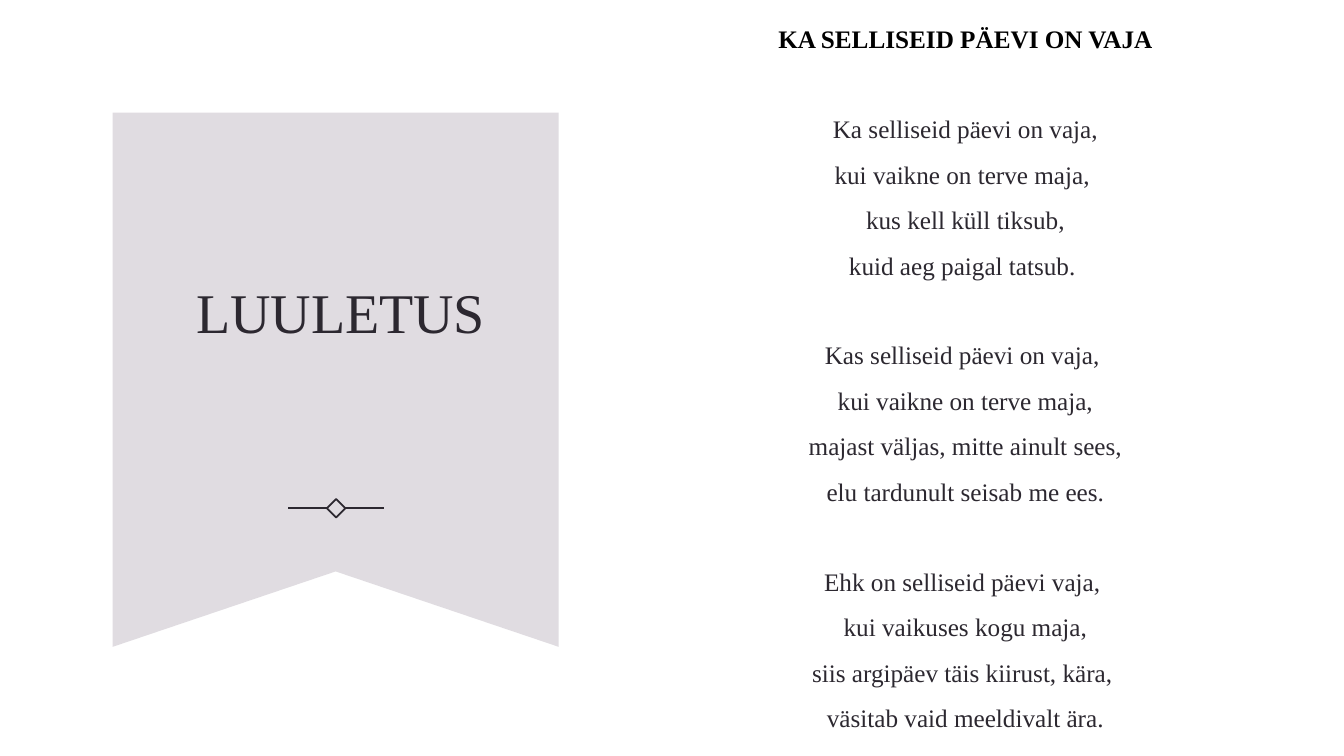
from lxml import etree
from pptx import Presentation
from pptx.dml.color import RGBColor
from pptx.enum.shapes import MSO_CONNECTOR, MSO_SHAPE
from pptx.enum.text import MSO_ANCHOR, MSO_AUTO_SIZE, PP_ALIGN
from pptx.oxml.ns import qn
from pptx.util import Cm, Pt

CENTER = PP_ALIGN.CENTER
MIDDLE = MSO_ANCHOR.MIDDLE
NO_AUTOFIT = MSO_AUTO_SIZE.NONE
STRAIGHT = MSO_CONNECTOR.STRAIGHT
RECTANGLE = MSO_SHAPE.RECTANGLE

FONT = "Times New Roman"
COLORS = {"paper": "FFFFFF", "ribbon": "E0DCE1", "ink": "2C2830", "heading": "000000"}
LINE_GAP = Pt(10.9)
STANZA_GAP = Pt(42.5)

HEADING = "KA SELLISEID PÄEVI ON VAJA"
STANZAS = [
    ["Ka selliseid päevi on vaja,", "kui vaikne on terve maja, ",
     "kus kell küll tiksub,", "kuid aeg paigal tatsub. "],
    ["Kas selliseid päevi on vaja, ", "kui vaikne on terve maja,",
     "majast väljas, mitte ainult sees,", "elu tardunult seisab me ees."],
    ["Ehk on selliseid päevi vaja, ", "kui vaikuses kogu maja,",
     "siis argipäev täis kiirust, kära, ", "väsitab vaid meeldivalt ära."],
]


def color(name):
    return RGBColor.from_string(COLORS[name])


def place(box, left, top, width, height):
    box.left, box.top, box.width, box.height = Cm(left), Cm(top), Cm(width), Cm(height)
    frame = box.text_frame
    frame.word_wrap = True
    frame.auto_size = NO_AUTOFIT
    frame.vertical_anchor = MIDDLE


def write(para, text, size, ink="ink", bold=False):
    para.text = text
    para.alignment = CENTER
    for span in para.runs:
        span.font.name = FONT
        span.font.size = Pt(size)
        span.font.bold = bold
        span.font.color.rgb = color(ink)


def remove_bullet(para):
    properties = para._p.get_or_add_pPr()
    properties.set("marL", "0")
    properties.set("indent", "0")
    etree.SubElement(properties, qn("a:buNone"))


def add_ribbon(page):
    """Draw the notched banner behind the title."""
    left, center, right = Cm(2.84), Cm(8.46), Cm(14.08)
    top, notch, bottom = Cm(2.84), Cm(14.4), Cm(16.3)
    outline = page.shapes.build_freeform(left, top)
    outline.add_line_segments([(right, top), (right, bottom), (center, notch), (left, bottom)])
    ribbon = outline.convert_to_shape()
    ribbon.shadow.inherit = False
    ribbon.fill.solid()
    ribbon.fill.fore_color.rgb = color("ribbon")
    ribbon.line.fill.background()
    page.shapes._spTree.insert(2, ribbon._element)


def style_line(shape):
    shape.line.color.rgb = color("ink")
    shape.line.width = Pt(1.25)


def add_ornament(page, center, middle):
    """Draw a diamond with a short rule on each side."""
    side, inner, outer = 0.33, 0.23, 1.21
    group = page.shapes.add_group_shape()
    diamond = group.shapes.add_shape(
        RECTANGLE, Cm(center - side / 2), Cm(middle - side / 2), Cm(side), Cm(side))
    diamond.rotation = 45
    diamond.shadow.inherit = False
    diamond.fill.background()
    style_line(diamond)
    for direction in (-1, 1):
        rule = group.shapes.add_connector(
            STRAIGHT, Cm(center + direction * inner), Cm(middle),
            Cm(center + direction * outer), Cm(middle))
        style_line(rule)
        etree.SubElement(rule._element.spPr, qn("a:effectLst"))


def fill_title(box):
    place(box, 3.91, 3.76, 9.35, 7.98)
    para = box.text_frame.paragraphs[0]
    write(para, "LUULETUS", 40)
    para.line_spacing = 1.1


def fill_poem(box):
    place(box, 17.75, 2.01, 13.16, 15.04)
    frame = box.text_frame
    heading = frame.paragraphs[0]
    write(heading, HEADING, 18, "heading", True)
    heading.space_before = LINE_GAP
    for stanza in STANZAS:
        for number, verse in enumerate(stanza):
            para = frame.add_paragraph()
            write(para, verse, 18)
            para.space_before = LINE_GAP if number else STANZA_GAP
    for para in frame.paragraphs:
        para.line_spacing = 1.0
        remove_bullet(para)


def main():
    deck = Presentation()
    deck.slide_width, deck.slide_height = Cm(33.87), Cm(19.05)
    page = deck.slides.add_slide(deck.slide_layouts[1])
    page.background.fill.solid()
    page.background.fill.fore_color.rgb = color("paper")
    add_ribbon(page)
    add_ornament(page, 8.47, 12.81)
    fill_title(page.shapes.title)
    fill_poem(page.placeholders[1])
    deck.save("out.pptx")


if __name__ == "__main__":
    main()
